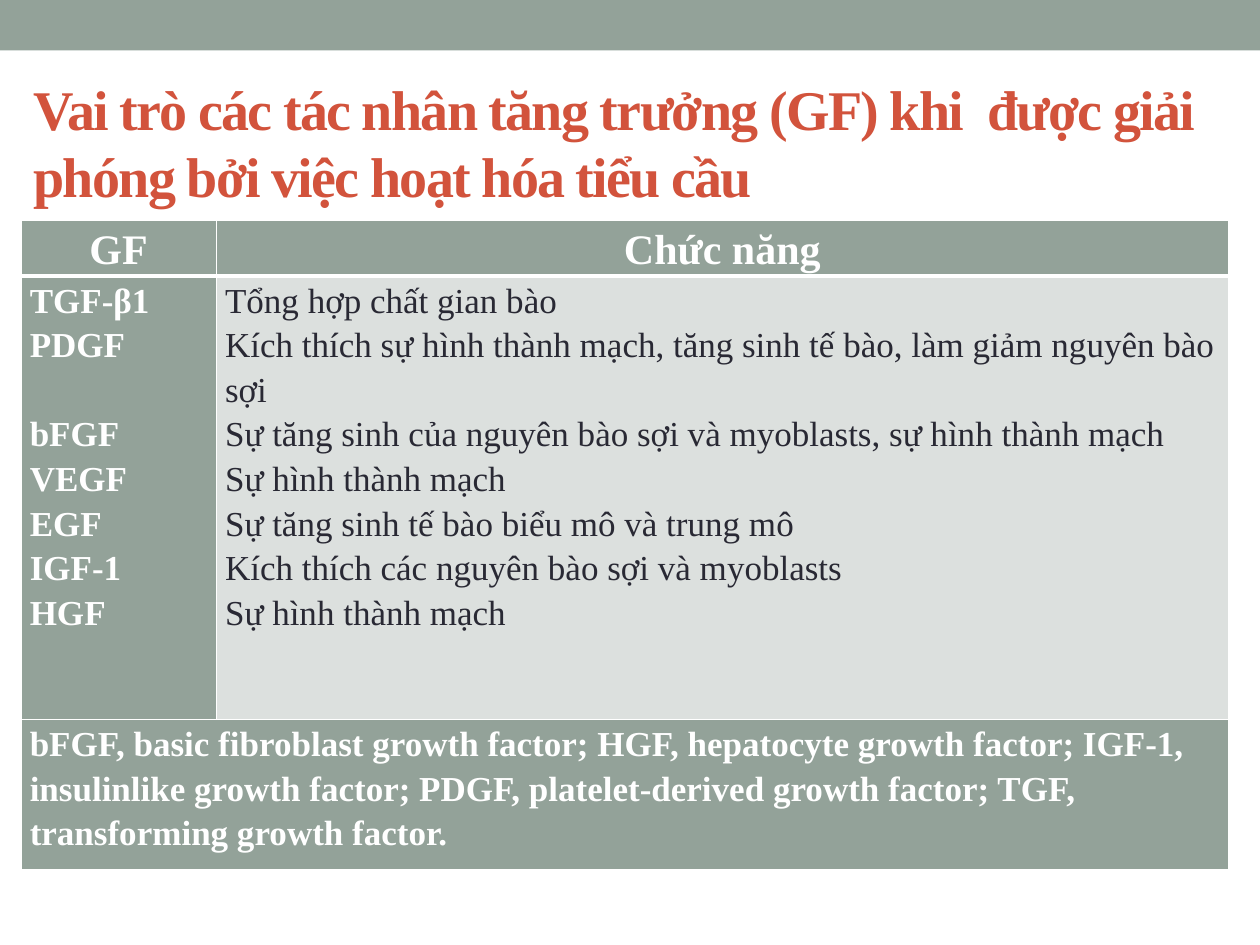
from lxml.etree import SubElement
from pptx import Presentation
from pptx.dml.color import RGBColor
from pptx.enum.shapes import MSO_SHAPE
from pptx.enum.text import MSO_ANCHOR, MSO_AUTO_SIZE, PP_ALIGN
from pptx.oxml.ns import qn
from pptx.util import Inches, Pt

COLORS = {"sage": "93A299", "red": "D2533C", "ink": "292934", "pale": "DCE0DE", "white": "FFFFFF"}
FACTORS = ["TGF-β1", "PDGF", "bFGF", "VEGF", "EGF", "IGF-1", "HGF"]
FUNCTIONS = [
    "Tổng hợp chất gian bào",
    "Kích thích sự hình thành mạch, tăng sinh tế bào, làm giảm nguyên bào sợi",
    "Sự tăng sinh của nguyên bào sợi và myoblasts, sự hình thành mạch",
    "Sự hình thành mạch",
    "Sự tăng sinh tế bào biểu mô và trung mô",
    "Kích thích các nguyên bào sợi và myoblasts",
    "Sự hình thành mạch",
]
ABBREVIATIONS = (
    "bFGF, basic fibroblast growth factor; HGF, hepatocyte growth factor; IGF-1, "
    "insulinlike growth factor; PDGF, platelet-derived growth factor; TGF, "
    "transforming growth factor."
)


def rgb(name):
    return RGBColor.from_string(COLORS[name])


def apply(target, values):
    for name, value in values.items():
        setattr(target, name, value)


class SlideBuilder:
    font = "Times New Roman"
    columns, rows = 120, 90

    def __init__(self):
        self.deck = Presentation()
        apply(self.deck, {"slide_width": Inches(10), "slide_height": Inches(7.5)})
        self.page = self.deck.slides.add_slide(self.deck.slide_layouts[5])

    def across(self, count):
        return round(self.deck.slide_width * count / self.columns)

    def down(self, count):
        return round(self.deck.slide_height * count / self.rows)

    def area(self, left, top, width, height):
        return self.across(left), self.down(top), self.across(width), self.down(height)

    def add_text(self, para, text, size, color, bold=True):
        span = para.add_run()
        span.text = text
        apply(span.font, {"name": self.font, "size": Pt(size), "bold": bold})
        span.font.color.rgb = rgb(color)
        return span

    def bar(self, area, color):
        box = self.page.shapes.add_shape(MSO_SHAPE.RECTANGLE, *self.area(*area))
        box.shadow.inherit = False
        box.fill.solid()
        box.fill.fore_color.rgb = rgb(color)
        box.line.fill.background()

    def title(self, area, text):
        box = self.page.shapes.title
        apply(box, dict(zip(("left", "top", "width", "height"), self.area(*area))))
        apply(box.text_frame, {"word_wrap": True, "auto_size": MSO_AUTO_SIZE.NONE,
                               "vertical_anchor": MSO_ANCHOR.MIDDLE})
        para = box.text_frame.paragraphs[0]
        para.alignment = PP_ALIGN.LEFT
        span = self.add_text(para, text, 32, "red")
        span.font._element.set("spc", "-100")

    def table(self, left, top, widths, heights):
        area = self.area(left, top, sum(widths), sum(heights))
        table = self.page.shapes.add_table(len(heights), len(widths), *area).table
        for column, width in zip(table.columns, widths):
            column.width = self.across(width)
        for row, height in zip(table.rows, heights):
            row.height = self.down(height)
        return table

    def borders(self, cell, bottom):
        properties = cell._tc.get_or_add_tcPr()
        for side, width in {"L": 1, "R": 1, "T": 1, "B": bottom}.items():
            line = SubElement(properties, qn(f"a:ln{side}"), w=str(Pt(width)))
            fill = SubElement(line, qn("a:solidFill"))
            SubElement(fill, qn("a:srgbClr"), val=COLORS["white"])

    def cell(self, cell, lines, fill="sage", color="white", size=20, bold=True,
             align=PP_ALIGN.LEFT, bottom=1):
        self.borders(cell, bottom)
        cell.fill.solid()
        cell.fill.fore_color.rgb = rgb(fill)
        apply(cell, {"margin_left": Inches(0.07), "margin_right": Inches(0.07),
                     "margin_top": 0, "margin_bottom": 0})
        for index, text in enumerate(lines):
            frame = cell.text_frame
            para = frame.add_paragraph() if index else frame.paragraphs[0]
            apply(para, {"alignment": align, "line_spacing": 1.15})
            self.add_text(para, text, size, color, bold)


def main():
    slide = SlideBuilder()
    slide.bar((0, 0, 120, 4.8), "sage")
    slide.title((2, 7, 116, 13),
                "Vai trò các tác nhân tăng trưởng (GF) khi  được giải phóng bởi việc hoạt hóa tiểu cầu")
    table = slide.table(2, 21, (18.6, 96.4), (5.28, 42.24, 14.28))
    for column, heading in enumerate(("GF", "Chức năng")):
        slide.cell(table.cell(0, column), [heading], size=24, align=PP_ALIGN.CENTER, bottom=3)
    factors = table.cell(1, 0)
    slide.cell(factors, FACTORS)
    factors.text_frame.paragraphs[FACTORS.index("PDGF")].space_after = Pt(25.5)
    slide.cell(table.cell(1, 1), FUNCTIONS, fill="pale", color="ink", bold=False)
    table.cell(2, 0).merge(table.cell(2, 1))
    slide.cell(table.cell(2, 0), [ABBREVIATIONS])
    slide.deck.save("out.pptx")


if __name__ == "__main__":
    main()
